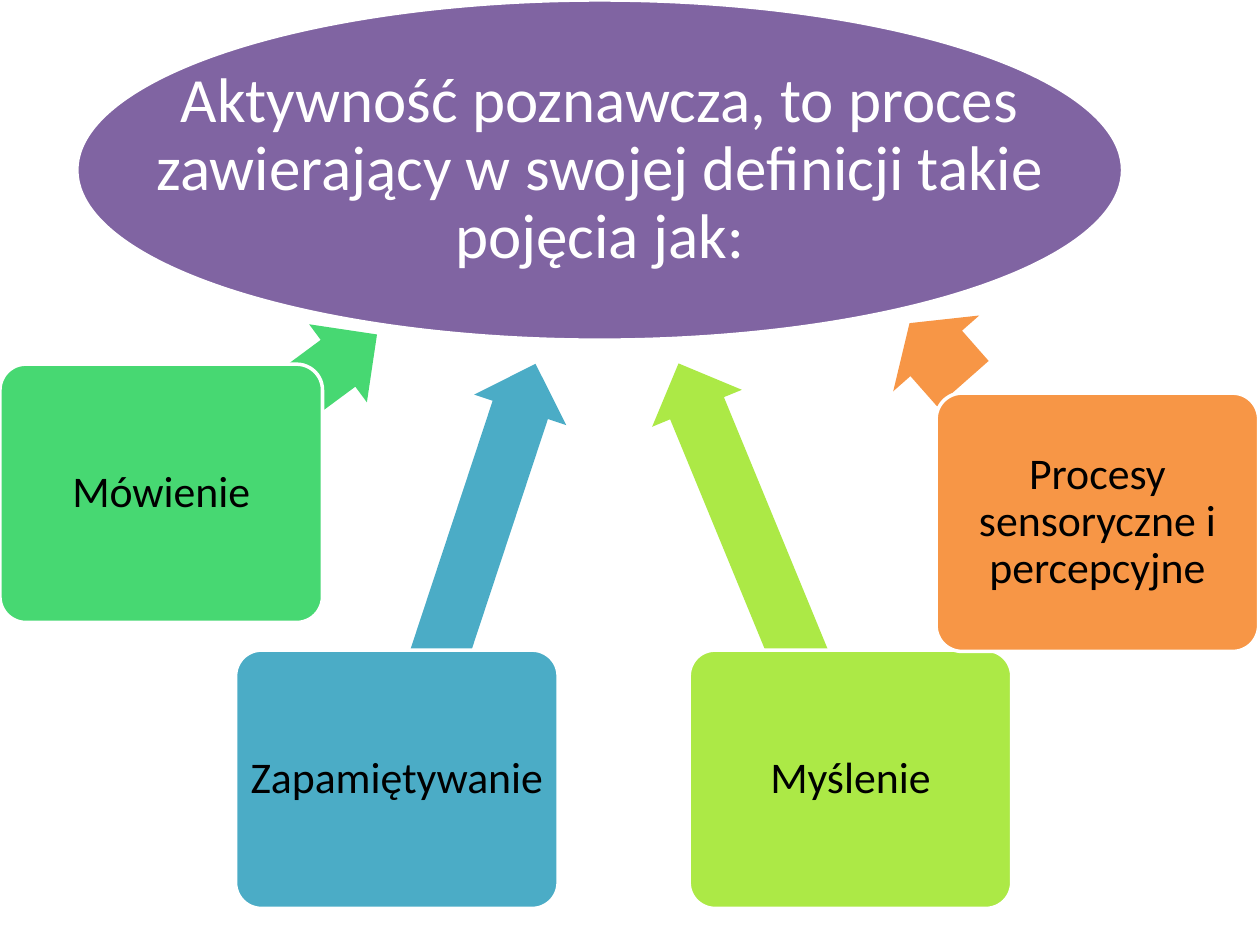
from pptx import Presentation
from pptx.dml.color import RGBColor
from pptx.enum.shapes import MSO_SHAPE
from pptx.enum.text import MSO_ANCHOR, MSO_AUTO_SIZE, PP_ALIGN
from pptx.util import Inches, Pt

WHITE = RGBColor(0xFF, 0xFF, 0xFF)
BLACK = RGBColor(0x00, 0x00, 0x00)
PURPLE = RGBColor(0x80, 0x64, 0xA2)
BLUE = RGBColor(0x4B, 0xAC, 0xC6)
GREEN = RGBColor(0x47, 0xD8, 0x72)
LIME = RGBColor(0xAC, 0xE9, 0x46)
ORANGE = RGBColor(0xF7, 0x96, 0x46)

CENTRAL_AREA = (0.61, 0, 8.3, 2.7)
BOX_SIZE = (2.56, 2.05)
CONCEPTS = [
    ("Zapamiętywanie", BLUE, (1.87, 5.16), (1.97, 4.15, 3.47, 0.77), 108.3),
    ("Mówienie", GREEN, (0, 2.89), (1.08, 2.9, 2.12, 0.77), 143.5),
    ("Myślenie", LIME, (5.47, 5.16), (4.28, 4.15, 3.57, 0.77), 67.6),
    ("Procesy sensoryczne i percepcyjne", ORANGE, (7.43, 3.12), (7.11, 2.35, 0.64, 0.91), 48.6),
]


def add_filled(kind, area, color, outlined=True):
    shape = page.shapes.add_shape(kind, *[Inches(value) for value in area])
    shape.shadow.inherit = False
    shape.fill.solid()
    shape.fill.fore_color.rgb = color
    if outlined:
        shape.line.color.rgb = WHITE
        shape.line.width = Pt(2)
    else:
        shape.line.fill.background()
    return shape


def write_text(shape, text, size, color, side_inset):
    frame = shape.text_frame
    frame_format = {
        "word_wrap": True,
        "auto_size": MSO_AUTO_SIZE.NONE,
        "vertical_anchor": MSO_ANCHOR.MIDDLE,
        "margin_left": Inches(side_inset),
        "margin_right": Inches(side_inset),
        "margin_top": Inches(0.03),
        "margin_bottom": Inches(0.03),
    }
    for name, value in frame_format.items():
        setattr(frame, name, value)
    para = frame.paragraphs[0]
    para.alignment = PP_ALIGN.CENTER
    para.line_spacing = 0.9
    span = para.add_run()
    span.text = text
    for name, value in {"name": "Calibri", "size": Pt(size)}.items():
        setattr(span.font, name, value)
    span.font.color.rgb = color


deck = Presentation()
deck.slide_width = Inches(10)
deck.slide_height = Inches(7.5)
page = deck.slides.add_slide(deck.slide_layouts[5])

ellipse = add_filled(MSO_SHAPE.OVAL, CENTRAL_AREA, PURPLE)
title = page.shapes.title
for name, value in zip(("left", "top", "width", "height"), CENTRAL_AREA):
    setattr(title, name, Inches(value))
write_text(
    title,
    "Aktywność poznawcza, to proces zawierający w swojej definicji takie pojęcia jak:",
    36, WHITE, 0.03,
)
ellipse.element.addnext(title.element)

for label, color, corner, arrow_area, angle in CONCEPTS:
    arrow = add_filled(MSO_SHAPE.LEFT_ARROW, arrow_area, color, outlined=False)
    arrow.rotation = angle
    arrow.adjustments[0] = 0.6
    arrow.adjustments[1] = 0.5
    box = add_filled(MSO_SHAPE.ROUNDED_RECTANGLE, corner + BOX_SIZE, color)
    box.adjustments[0] = 0.1
    write_text(box, label, 25, BLACK, 0)

deck.save("out.pptx")
